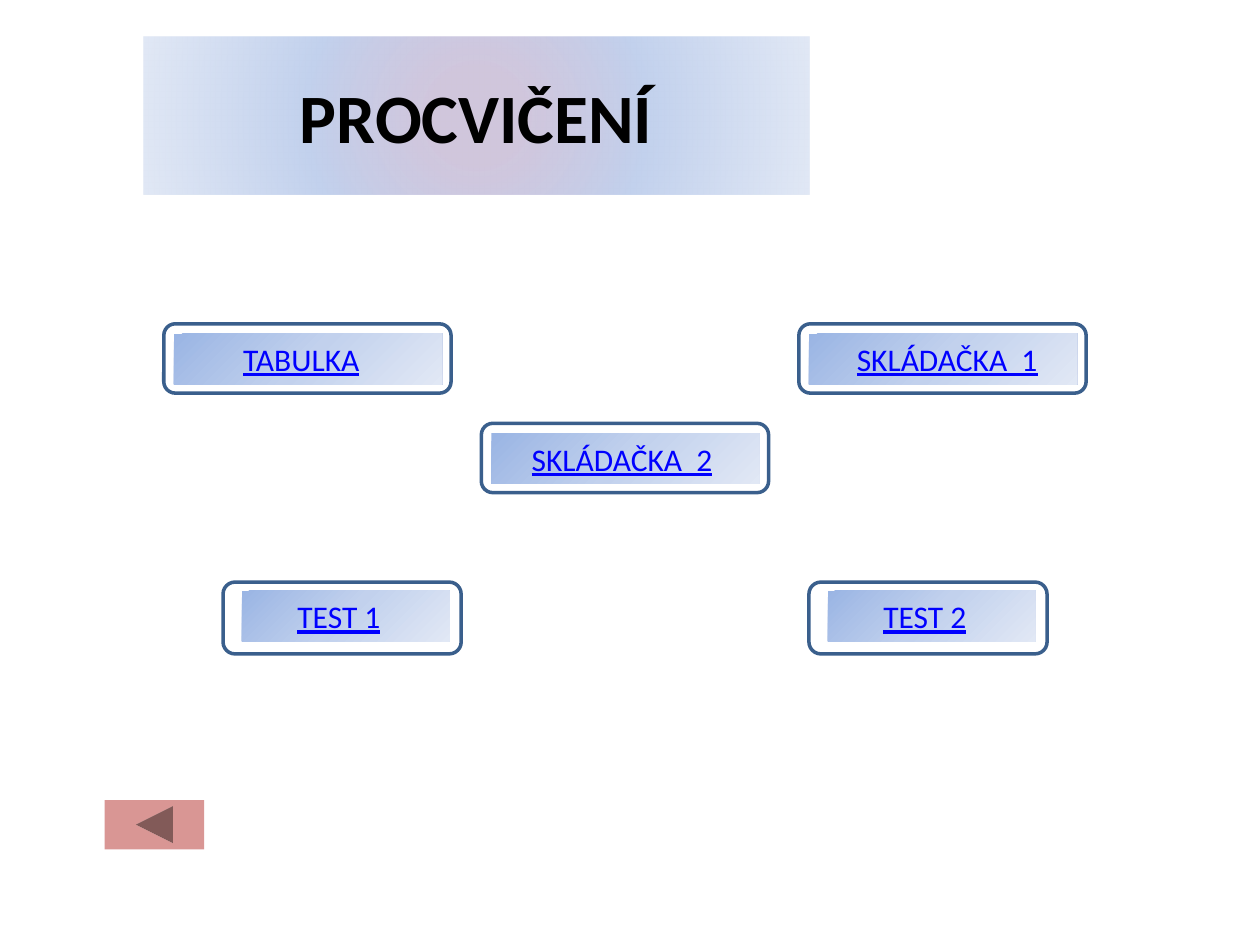
from lxml.etree import SubElement
from pptx import Presentation
from pptx.dml.color import RGBColor
from pptx.enum.shapes import MSO_SHAPE
from pptx.enum.text import MSO_ANCHOR, PP_ALIGN
from pptx.oxml.ns import qn
from pptx.util import Inches, Pt

# Content
TITLE = "PROCVIČENÍ"
COLORS = {"text": "000000", "link": "0000FF", "frame": "3A5F8C", "back": "D99694"}
# Gradient stops: position %, colour, opacity %
GLOW = [(15, "CCC1DA", 90), (50, "C2D1ED", 100), (100, "E1E8F5", 100)]
SHADE = [(0, "9AB5E4", 100), (50, "C2D1ED", 100), (100, "E1E8F5", 100)]
# Button sizes: frame width, height, panel offset x, y, panel width
WIDE = (2.28, 0.55, 0.08, 0.08, 2.13)
SMALL = (1.89, 0.57, 0.15, 0.07, 1.65)
PANEL = 0.4
# Label, size, frame left, frame top, text indent
BUTTONS = [
    ("TABULKA", WIDE, 1.3, 2.57, 0.45),
    ("SKLÁDAČKA  1", WIDE, 6.34, 2.57, 0.28),
    ("SKLÁDAČKA  2", WIDE, 3.82, 3.36, 0.22),
    ("TEST 1", SMALL, 1.77, 4.62, 0.34),
    ("TEST 2", SMALL, 6.42, 4.62, 0.34),
]


def rgb(name):
    return RGBColor.from_string(COLORS[name])


def shade(shape, stops, angle=None):
    """Fill with a linear gradient, or a round one if no angle is given."""
    shape.fill.gradient()
    grad = shape.element.spPr.find(qn("a:gradFill"))
    for child in list(grad):
        grad.remove(child)
    items = SubElement(grad, qn("a:gsLst"))
    for pos, color, alpha in stops:
        stop = SubElement(items, qn("a:gs"), pos=str(pos * 1000))
        tint = SubElement(stop, qn("a:srgbClr"), val=color)
        if alpha < 100:
            SubElement(tint, qn("a:alpha"), val=str(alpha * 1000))
    if angle is None:
        way = SubElement(grad, qn("a:path"), path="circle")
        SubElement(way, qn("a:fillToRect"), l="50000", t="50000", r="50000", b="50000")
    else:
        SubElement(grad, qn("a:lin"), ang=str(angle * 60000), scaled="0")


def add_box(kind, *at):
    shape = slide.shapes.add_shape(kind, *map(Inches, at))
    shape.shadow.inherit = False
    shape.line.fill.background()
    return shape


def add_button(label, size, left, top, indent):
    width, height, dx, dy, inner = size
    panel = add_box(MSO_SHAPE.RECTANGLE, left + dx, top + dy, inner, PANEL)
    shade(panel, SHADE, 45)
    frame = panel.text_frame
    frame.margin_left = Inches(0.1 + indent)
    frame.vertical_anchor = MSO_ANCHOR.TOP
    par = frame.paragraphs[0]
    par.alignment = PP_ALIGN.LEFT
    run = par.add_run()
    run.text = label
    font = run.font
    font.name, font.size, font.underline = "Calibri", Pt(18), True
    font.color.rgb = rgb("link")

    border = add_box(MSO_SHAPE.ROUNDED_RECTANGLE, left, top, width, height)
    border.fill.background()
    border.line.color.rgb = rgb("frame")
    border.line.width = Pt(2)


deck = Presentation()
deck.slide_width, deck.slide_height = Inches(10), Inches(7.5)
slide = deck.slides.add_slide(deck.slide_layouts[5])

# Title
title = slide.shapes.title
title.left, title.top = Inches(1.14), Inches(0.29)
title.width, title.height = Inches(5.28), Inches(1.25)
shade(title, GLOW)
title.text_frame.text = TITLE
title.text_frame.vertical_anchor = MSO_ANCHOR.MIDDLE
head = title.text_frame.paragraphs[0]
head.alignment = PP_ALIGN.CENTER
head.font.name, head.font.size, head.font.bold = "Calibri", Pt(39.6), True
head.font.color.rgb = rgb("text")

# Menu buttons
for button in BUTTONS:
    add_button(*button)

# Back button
back = add_box(MSO_SHAPE.ACTION_BUTTON_BACK_OR_PREVIOUS, 0.83, 6.35, 0.79, 0.39)
back.fill.solid()
back.fill.fore_color.rgb = rgb("back")

deck.save("out.pptx")
